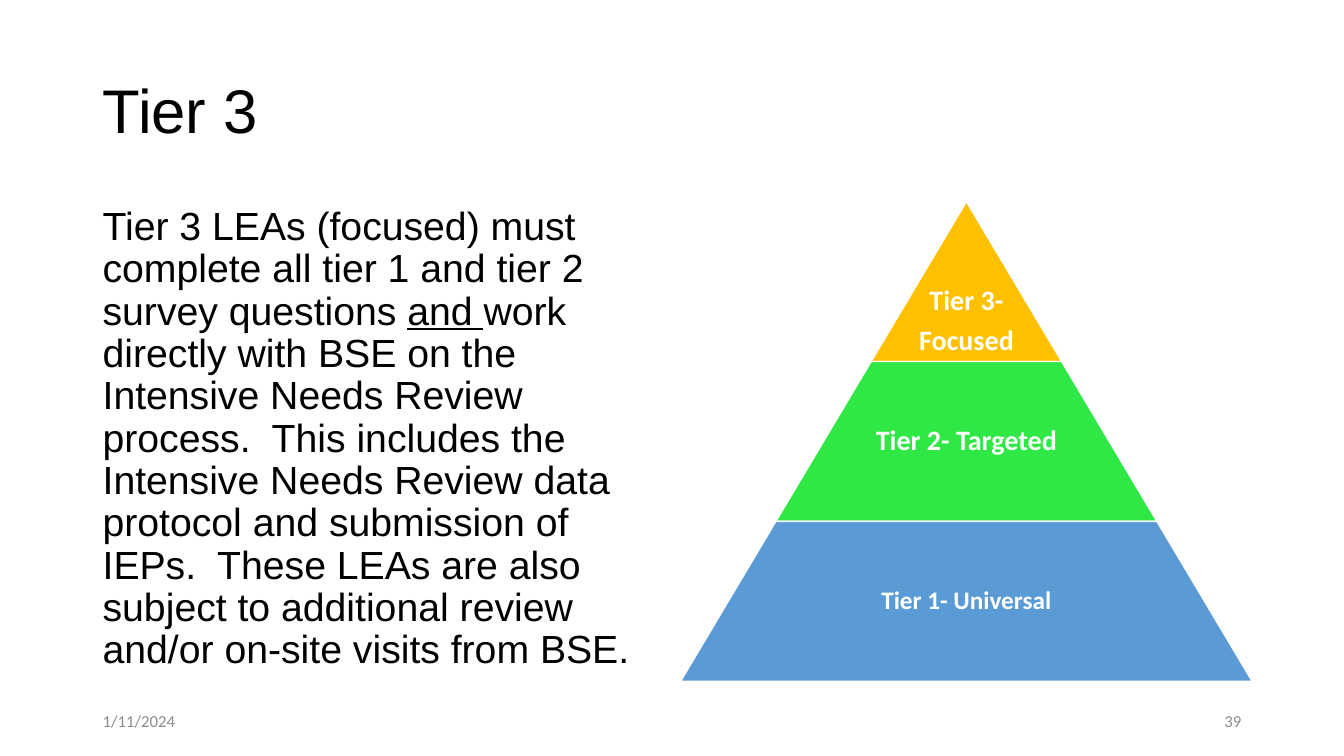
from pptx import Presentation
from pptx.dml.color import RGBColor
from pptx.enum.shapes import MSO_SHAPE
from pptx.enum.text import MSO_ANCHOR, PP_ALIGN
from pptx.util import Inches, Pt

WIDTH, HEIGHT = 13.33, 7.5
MARGIN = 0.92
COLUMN = 5.67
CONTENT_TOP, CONTENT_HEIGHT = 2, 4.76
PYRAMID_LEFT = 6.75

TITLE = {"size": Pt(44), "name": "Arial"}
BODY = {"size": Pt(28), "name": "Arial"}
FOOTER = {"size": Pt(12), "name": "Calibri"}

NARRATIVE = [
    ("Tier 3 LEAs (focused) must complete all tier 1 and tier 2 survey questions ", False),
    ("and ", True),
    ("work directly with BSE on the Intensive Needs Review process.  This includes "
     "the Intensive Needs Review data protocol and submission of IEPs.  These LEAs are "
     "also subject to additional review and/or on-site visits from BSE.", False),
]
TIERS = [
    (["Tier 3-", "Focused"], "FFC000", 20, 0.5),
    (["Tier 2- Targeted"], "30E845", 20, 0),
    (["Tier 1- Universal"], "5B9BD5", 18, 0),
]


def color(hex_code):
    return RGBColor.from_string(hex_code)


def apply(target, values):
    for key, value in values.items():
        setattr(target, key, value)


def add_text(slide, box, paragraphs, font, ink="000000", frame=None, layout=None):
    area = slide.shapes.add_textbox(*map(Inches, box)).text_frame
    apply(area, {"word_wrap": True, "vertical_anchor": MSO_ANCHOR.MIDDLE, **(frame or {})})
    for index, runs in enumerate(paragraphs):
        paragraph = area.paragraphs[0] if index == 0 else area.add_paragraph()
        apply(paragraph, layout or {})
        for words, underline in runs:
            run = paragraph.add_run()
            run.text = words
            apply(run.font, {**font, "underline": underline})
            run.font.color.rgb = color(ink)


def add_heading(slide, box):
    add_text(slide, box, [[("Tier 3", False)]], TITLE, layout={"line_spacing": 0.9})


def add_narrative(slide, box):
    add_text(slide, box, [NARRATIVE], BODY,
             frame={"vertical_anchor": MSO_ANCHOR.TOP}, layout={"line_spacing": 0.9})


def add_pyramid(slide, box):
    left, top, width, height = box
    band = height / len(TIERS)
    step = width / len(TIERS)
    insets = dict.fromkeys(
        ("margin_left", "margin_right", "margin_top", "margin_bottom"), Inches(0.03))
    for row, (lines, fill, size, label_drop) in enumerate(TIERS):
        band_width = step * (row + 1)
        band_left = left + (width - band_width) / 2
        band_top = top + row * band
        tier = slide.shapes.add_shape(
            MSO_SHAPE.TRAPEZOID, *map(Inches, (band_left, band_top, band_width, band)))
        tier.adjustments[0] = step / 2 / band
        tier.shadow.inherit = False
        tier.fill.solid()
        tier.fill.fore_color.rgb = color(fill)
        tier.line.color.rgb = color("FFFFFF")
        tier.line.width = Pt(1)
        label_box = (band_left, band_top + band * label_drop,
                     band_width, band * (1 - label_drop))
        add_text(slide, label_box, [[(line, False)] for line in lines],
                 {"size": Pt(size), "name": "Calibri", "bold": True}, "FFFFFF", insets,
                 {"alignment": PP_ALIGN.CENTER, "line_spacing": 0.9,
                  "space_after": Pt(size * 0.35)})


def add_footer(slide, box):
    left, top, width, height = box
    part = 3
    for words, start, alignment in (
        ("1/11/2024", left, PP_ALIGN.LEFT),
        ("39", left + width - part, PP_ALIGN.RIGHT),
    ):
        add_text(slide, (start, top, part, height), [[(words, False)]], FOOTER,
                 "8C8C8C", layout={"alignment": alignment})


def main():
    deck = Presentation()
    apply(deck, {"slide_width": Inches(WIDTH), "slide_height": Inches(HEIGHT)})
    slide = deck.slides.add_slide(deck.slide_layouts[6])
    content_width = WIDTH - 2 * MARGIN
    add_heading(slide, (MARGIN, 0.4, content_width, 1.45))
    add_narrative(slide, (MARGIN, CONTENT_TOP, COLUMN, CONTENT_HEIGHT))
    add_pyramid(slide, (PYRAMID_LEFT, CONTENT_TOP, COLUMN, CONTENT_HEIGHT))
    add_footer(slide, (MARGIN, 6.95, content_width, 0.4))
    deck.save("out.pptx")


if __name__ == "__main__":
    main()
